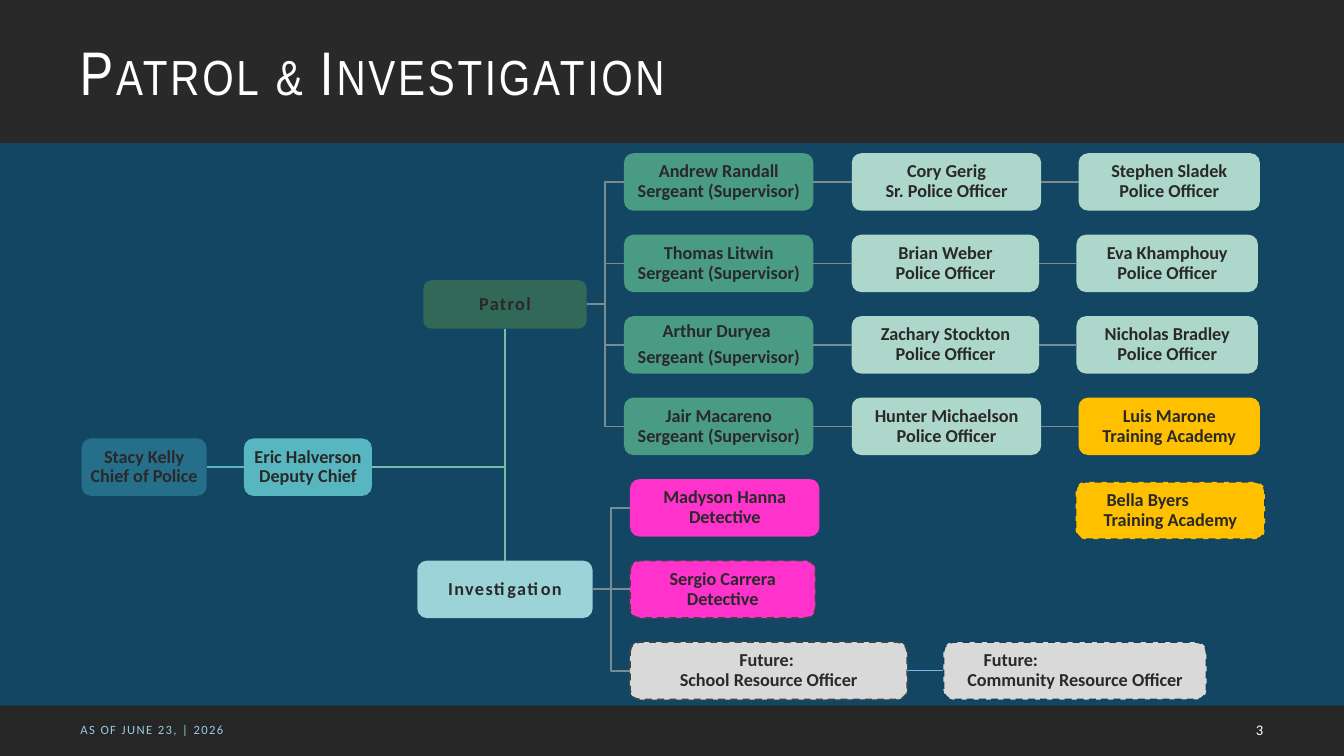
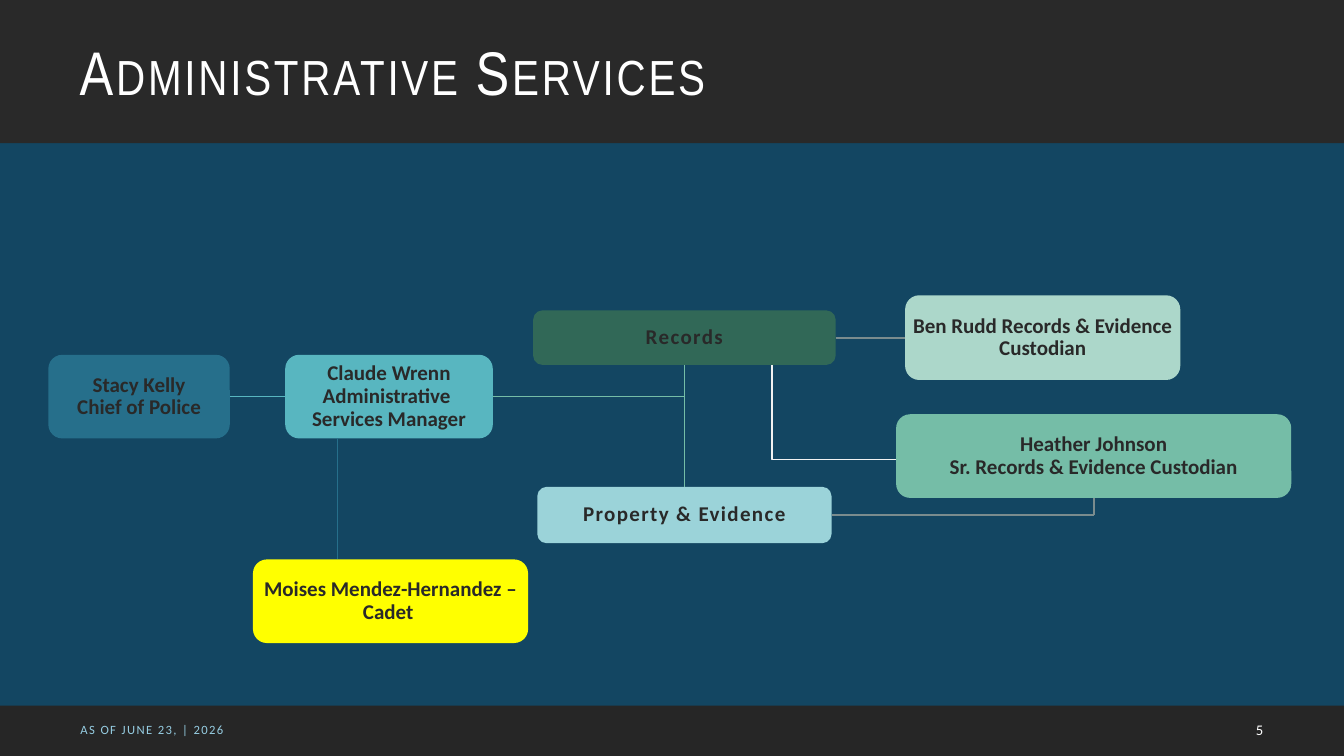
from lxml import etree
from pptx import Presentation
from pptx.dml.color import RGBColor
from pptx.enum import dml, shapes, text
from pptx.oxml import ns
from pptx.util import Inches, Pt

SHAPE, LINE, ALIGN = shapes.MSO_SHAPE, shapes.MSO_CONNECTOR, text.PP_ALIGN
NAVY, CHARCOAL, FOOTER, WHITE = "134662", "292929", "262626", "FFFFFF"
CHIEF, DEPUTY, PATROL, SUPPORT = "266F8B", "58B6C0", "316857", "9BD3D9"
SERGEANT, OFFICER, SENIOR = "4A9B83", "ACD7CA", "75BDA7"
ACADEMY, DETECTIVE, FUTURE, CADET = "FFC000", "FF33CC", "D9D9D9", "FFFF00"
GREY, SKY, PALE = "7A8C8E", "7AB9E7", "F2F2F2"
DARK_DASH, BLUE_DASH = "3D4647", "124163"


def box(s, rect, fill, words="", size=13, spc=0, dash=None, indent=None, kind=SHAPE.ROUNDED_RECTANGLE,
        color=CHARCOAL, font="Calibri", bold=True, align=ALIGN.CENTER, insets=(0.01,) * 4, caps=False):
    """Add a filled shape, or a text box when fill is None; indent left-aligns the first paragraph."""
    rect = [Inches(v) for v in rect]
    if fill:
        sp = s.shapes.add_shape(kind, *rect)
        sp.shadow.inherit = False
        sp.fill.solid()
        sp.fill.fore_color.rgb = RGBColor.from_string(fill)
        sp.line.fill.background()
    else:
        sp = s.shapes.add_textbox(*rect)
    if dash:
        sp.line.color.rgb = RGBColor.from_string(dash)
        sp.line.width = Pt(1.25)
        sp.line.dash_style = dml.MSO_LINE.DASH
    tf = sp.text_frame
    tf.word_wrap = True
    tf.vertical_anchor = text.MSO_ANCHOR.MIDDLE
    tf.margin_left, tf.margin_top, tf.margin_right, tf.margin_bottom = [Inches(v) for v in insets]
    tf.text = words
    for p in tf.paragraphs:
        p.alignment = align
        p.line_spacing = 0.9
        p.space_after = Pt(4.5 if indent is None else 0)
        p.font.name, p.font.size, p.font.bold = font, Pt(size), bold
        p.font.color.rgb = RGBColor.from_string(color)
        if spc:
            p.font._rPr.set("spc", str(spc * 100))
        if caps:
            p.font._rPr.set("cap", "small")
    if indent is not None:
        tf.paragraphs[0].alignment = ALIGN.LEFT
        tf.paragraphs[0]._p.pPr.set("marL", str(Inches(indent)))
    return sp


def link(s, color, a, b, sites=(2, 1), kind=LINE.STRAIGHT, width=1.25):
    """Connect a to b, each a shape (joined at its site) or an (x, y) point."""
    points = [[Inches(v) for v in end] if isinstance(end, tuple) else (0, 0) for end in (a, b)]
    c = s.shapes.add_connector(kind, *points[0], *points[1])
    for end, site, join in ((a, sites[0], c.begin_connect), (b, sites[1], c.end_connect)):
        if not isinstance(end, tuple):
            join(end, site)
    c.line.color.rgb = RGBColor.from_string(color)
    c.line.width = Pt(width)
    etree.SubElement(c._element.spPr, ns.qn("a:effectLst"))


RIGHT, LEFT, BOTTOM, TOP = 3, 1, 2, 0
SIDEWAYS, DOWN = (RIGHT, LEFT), (BOTTOM, TOP)
WIDTH = 40 / 3

prs = Presentation()
prs.slide_width, prs.slide_height = Inches(WIDTH), Inches(7.5)

# Shared background, title band and footer
slides = []
for title, number in (("Patrol & Investigation", "3"), ("Administrative Services", "5")):
    s = prs.slides.add_slide(prs.slide_layouts[6])
    s.background.fill.solid()
    s.background.fill.fore_color.rgb = RGBColor.from_string(NAVY)
    box(s, (0, 0, WIDTH, 1.42), CHARCOAL, title, 44, 2, kind=SHAPE.RECTANGLE, color=WHITE, font="Arial Narrow",
        bold=False, align=ALIGN.LEFT, insets=(0.79, 0.12, 0.1, 0.05), caps=True)
    box(s, (0, 7, WIDTH, 0.5), FOOTER, kind=SHAPE.RECTANGLE)
    margins = (0.1, 0.05, 0.1, 0.05)
    box(s, (0.7, 7.05, 7.46, 0.4), None, "AS OF JUNE 23, | 2026", 9, 1, color="96CDE2", bold=False,
        align=ALIGN.LEFT, insets=margins)
    box(s, (11.95, 7.05, 0.68, 0.4), None, number, 10.5, color=WHITE, bold=False, align=ALIGN.RIGHT, insets=margins)
    slides.append(s)

# Patrol & Investigation
s = slides[0]
rows = [1.52 + i * 4.85 / 6 for i in range(7)]
H = 0.57
chief = box(s, (0.81, 4.35, 1.24, H), CHIEF, "Stacy Kelly\vChief of Police")
deputy = box(s, (2.42, 4.35, 1.27, H), DEPUTY, "Eric Halverson\vDeputy Chief")
patrol = box(s, (4.2, 2.78, 1.62, 0.48), PATROL, "Patrol", spc=1)
investigation = box(s, (4.14, rows[5], 1.74, H), SUPPORT, "Investigation", spc=1)
link(s, DEPUTY, chief, deputy, SIDEWAYS)
link(s, SENIOR, deputy, (5.01, 4.35 + H / 2), SIDEWAYS)
link(s, SENIOR, patrol, investigation, DOWN)

teams = (
    ("Andrew Randall\vSergeant (Supervisor)", "Cory Gerig\vSr. Police Officer", "Stephen Sladek\vPolice Officer",
     1.88, OFFICER),
    ("Thomas Litwin\vSergeant (Supervisor)", "Brian Weber\vPolice Officer", "Eva Khamphouy\vPolice Officer",
     1.86, OFFICER),
    ("Arthur Duryea \nSergeant (Supervisor)", "Zachary Stockton\vPolice Officer", "Nicholas Bradley\vPolice Officer",
     1.86, OFFICER),
    ("Jair Macareno\vSergeant (Supervisor)", "Hunter Michaelson\vPolice Officer", "Luis Marone\vTraining Academy",
     1.88, ACADEMY),
)
for top, (lead, second, third, width, fill) in zip(rows, teams):
    sergeant = box(s, (6.19, top, 1.88, H), SERGEANT, lead)
    officer = box(s, (8.45, top, width, H), OFFICER, second)
    junior = box(s, (8.45 + width + 0.37, top, 1.8, H), fill, third)
    link(s, GREY, patrol, sergeant, SIDEWAYS, LINE.ELBOW)
    link(s, GREY, sergeant, officer, SIDEWAYS)
    link(s, GREY, officer, junior, SIDEWAYS)

hanna = box(s, (6.25, rows[4], 1.88, H), DETECTIVE, "Madyson Hanna\vDetective")
carrera = box(s, (6.25, rows[5], 1.84, H), DETECTIVE, "Sergio Carrera Detective", dash=DARK_DASH)
school = box(s, (6.25, rows[6], 2.75, H), FUTURE, "Future: \vSchool Resource Officer", dash=DARK_DASH)
box(s, (10.67, 4.78, 1.88, H), ACADEMY, "Bella Byers\nTraining Academy", dash=BLUE_DASH, indent=0.27)
community = box(s, (9.36, rows[6], 2.61, H), FUTURE, "Future:\nCommunity Resource Officer", dash=BLUE_DASH,
                indent=0.36, kind=SHAPE.FLOWCHART_ALTERNATE_PROCESS)
link(s, GREY, investigation, hanna, SIDEWAYS, LINE.ELBOW)
link(s, GREY, investigation, carrera, SIDEWAYS)
link(s, GREY, investigation, school, SIDEWAYS, LINE.ELBOW)
link(s, SKY, school, community, SIDEWAYS, width=1)

# Administrative Services
s = slides[1]
H = 0.83
link(s, PALE, (5.85, 3.47), (9.47, 4.56), kind=LINE.ELBOW, width=1)
chief = box(s, (0.48, 3.52, 1.8, H), CHIEF, "Stacy Kelly\vChief of Police", 15)
manager = box(s, (2.83, 3.52, 2.06, H), DEPUTY, "Claude Wrenn\vAdministrative \vServices Manager", 15)
records = box(s, (5.29, 3.08, 3, 0.54), PATROL, "Records", 15, 1)
evidence = box(s, (5.33, 4.83, 2.92, 0.56), SUPPORT, "Property & Evidence", 15, 1)
custodian = box(s, (8.98, 2.93, 2.73, 0.84), OFFICER, "Ben Rudd Records & Evidence Custodian", 15)
senior = box(s, (8.89, 4.11, 3.92, H), SENIOR, "Heather Johnson\vSr. Records & Evidence Custodian", 15)
box(s, (2.51, 5.55, 2.73, H), CADET, "Moises Mendez-Hernandez – Cadet ", 15)
link(s, DEPUTY, chief, manager, SIDEWAYS)
link(s, SENIOR, manager, (6.79, 3.52 + H / 2), SIDEWAYS)
link(s, SENIOR, records, evidence, DOWN)
link(s, GREY, records, custodian, SIDEWAYS)
link(s, GREY, evidence, (10.85, 5.11), SIDEWAYS)
link(s, GREY, (10.85, 5.11), senior, (TOP, BOTTOM))
link(s, CHIEF, (3.35, 4.35), (3.35, 5.55), width=1)

prs.save("out.pptx")
